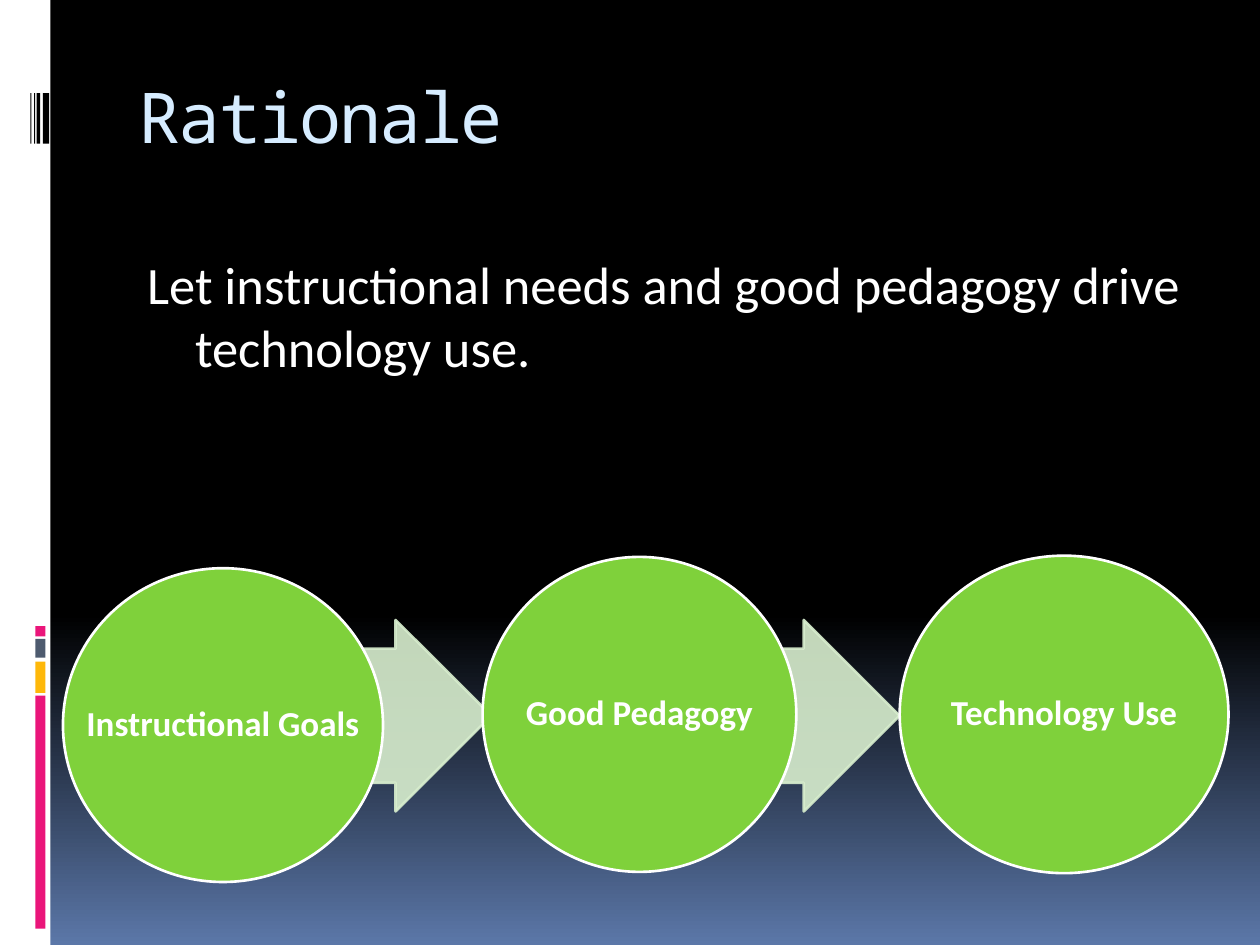
from dataclasses import dataclass

from lxml import etree
from pptx import Presentation
from pptx.dml.color import RGBColor
from pptx.enum.shapes import MSO_SHAPE
from pptx.enum.text import MSO_ANCHOR, MSO_AUTO_SIZE, PP_ALIGN
from pptx.oxml.ns import qn
from pptx.util import Inches, Pt

RECT, OVAL, ARROW = MSO_SHAPE.RECTANGLE, MSO_SHAPE.OVAL, MSO_SHAPE.RIGHT_ARROW
TOP, MIDDLE = MSO_ANCHOR.TOP, MSO_ANCHOR.MIDDLE
LEFT, CENTER = PP_ALIGN.LEFT, PP_ALIGN.CENTER
FIXED = MSO_AUTO_SIZE.NONE


@dataclass(frozen=True)
class Theme:
    black: str = "000000"
    white: str = "FFFFFF"
    blue: str = "5B77A8"
    ice: str = "D6ECFF"
    pink: str = "EA157A"
    gold: str = "FEB80A"
    slate: str = "4E5B6F"
    green: str = "7FD13B"
    mint: str = "D8EECE"
    head: str = "Noto Sans Mono"
    text: str = "Calibri"
    title: int = 40
    body: int = 30
    label: int = 20


THEME = Theme()

# Side bar marks: left, top, width, height, colour
BARS = [
    (0, 0, 0.4, 7.5, THEME.white),
    (0.28, 5.52, 0.08, 1.85, THEME.pink),
    (0.28, 5.25, 0.08, 0.25, THEME.gold),
    (0.28, 5.07, 0.08, 0.15, THEME.slate),
    (0.28, 4.97, 0.08, 0.08, THEME.pink),
]
STRIPES = [(0.34, 0.05), (0.29, 0.03), (0.27, 0.01), (0.24, 0.01)]

# Steps: label, then left, top, width, height
STEPS = [
    ("Instructional Goals", (0.5, 4.51, 2.54, 2.49)),
    ("Good Pedagogy", (3.83, 4.42, 2.49, 2.5)),
    ("Technology Use", (7.14, 4.41, 2.61, 2.52)),
]
ARROW_LEFT, ARROW_STEP = 2.17, 3.24


def rgb(code):
    return RGBColor.from_string(code)


def style(para, size, color, face=THEME.text, bold=False):
    font = para.font
    font.name, font.size, font.bold = face, Pt(size), bold
    font.color.rgb = rgb(color)


def add_shape(slide, kind, box, fill, line=None):
    shape = slide.shapes.add_shape(kind, *map(Inches, box))
    shape.shadow.inherit = False
    shape.fill.solid()
    shape.fill.fore_color.rgb = rgb(fill)
    if line:
        shape.line.color.rgb = rgb(line)
        shape.line.width = Pt(1.5)
    else:
        shape.line.fill.background()
    return shape


def paint_back(slide):
    fill = slide.background.fill
    fill.gradient()
    fill.gradient_angle = 270
    stops = zip(fill.gradient_stops, (0.65, 1), (THEME.black, THEME.blue))
    for stop, place, color in stops:
        stop.position = place
        stop.color.rgb = rgb(color)


def add_title(slide, text):
    title = slide.shapes.title
    title.left, title.top = Inches(1), Inches(0.56)
    title.width, title.height = Inches(8.5), Inches(1)
    frame = title.text_frame
    frame.text = text
    frame.auto_size = FIXED
    frame.vertical_anchor = TOP
    frame.margin_top = Inches(0.02)
    para = frame.paragraphs[0]
    para.alignment = LEFT
    style(para, THEME.title, THEME.ice, THEME.head)
    # Tighten the letters by one point
    para.runs[0].font._element.set("spc", "-100")


def add_body(slide, text):
    box = slide.shapes.add_textbox(*map(Inches, (1, 1.95, 8.5, 1.3)))
    frame = box.text_frame
    frame.word_wrap = True
    frame.text = text
    para = frame.paragraphs[0]
    para.space_before = Pt(7)
    style(para, THEME.body, THEME.white)
    # Hanging indent
    props = para._p.get_or_add_pPr()
    props.set("marL", str(Inches(0.45)))
    props.set("indent", str(Inches(-0.38)))


def add_arrow(slide, left):
    arrow = add_shape(slide, ARROW, (left, 4.92, 1.73, 1.52),
                      THEME.mint, THEME.mint)
    arrow.adjustments[0], arrow.adjustments[1] = 0.7, 0.5
    # Fill and line are 90% opaque
    for color in arrow._element.spPr.iter(qn("a:srgbClr")):
        etree.SubElement(color, qn("a:alpha")).set("val", "90000")


def add_step(slide, label, box):
    frame = add_shape(slide, OVAL, box, THEME.green, THEME.white).text_frame
    frame.text = label
    frame.word_wrap = False
    frame.vertical_anchor = MIDDLE
    frame.margin_left = frame.margin_right = Inches(0.01)
    frame.margin_top = frame.margin_bottom = Inches(0.01)
    para = frame.paragraphs[0]
    para.alignment = CENTER
    para.line_spacing = 0.9
    style(para, THEME.label, THEME.white, bold=True)


def main():
    deck = Presentation()
    deck.slide_width, deck.slide_height = Inches(10), Inches(7.5)
    slide = deck.slides.add_slide(deck.slide_layouts[5])

    # Background and side bar
    paint_back(slide)
    for *box, color in BARS:
        add_shape(slide, RECT, box, color)
    for left, width in STRIPES:
        add_shape(slide, RECT, (left, 0.74, width, 0.4), THEME.black)

    # Heading and statement
    add_title(slide, "Rationale")
    add_body(slide, "Let instructional needs and good pedagogy drive "
                    "technology use.")

    # Process: arrows run behind the circles
    for i in range(len(STEPS) - 1):
        add_arrow(slide, ARROW_LEFT + i * ARROW_STEP)
    for label, box in STEPS:
        add_step(slide, label, box)

    deck.save("out.pptx")


if __name__ == "__main__":
    main()
